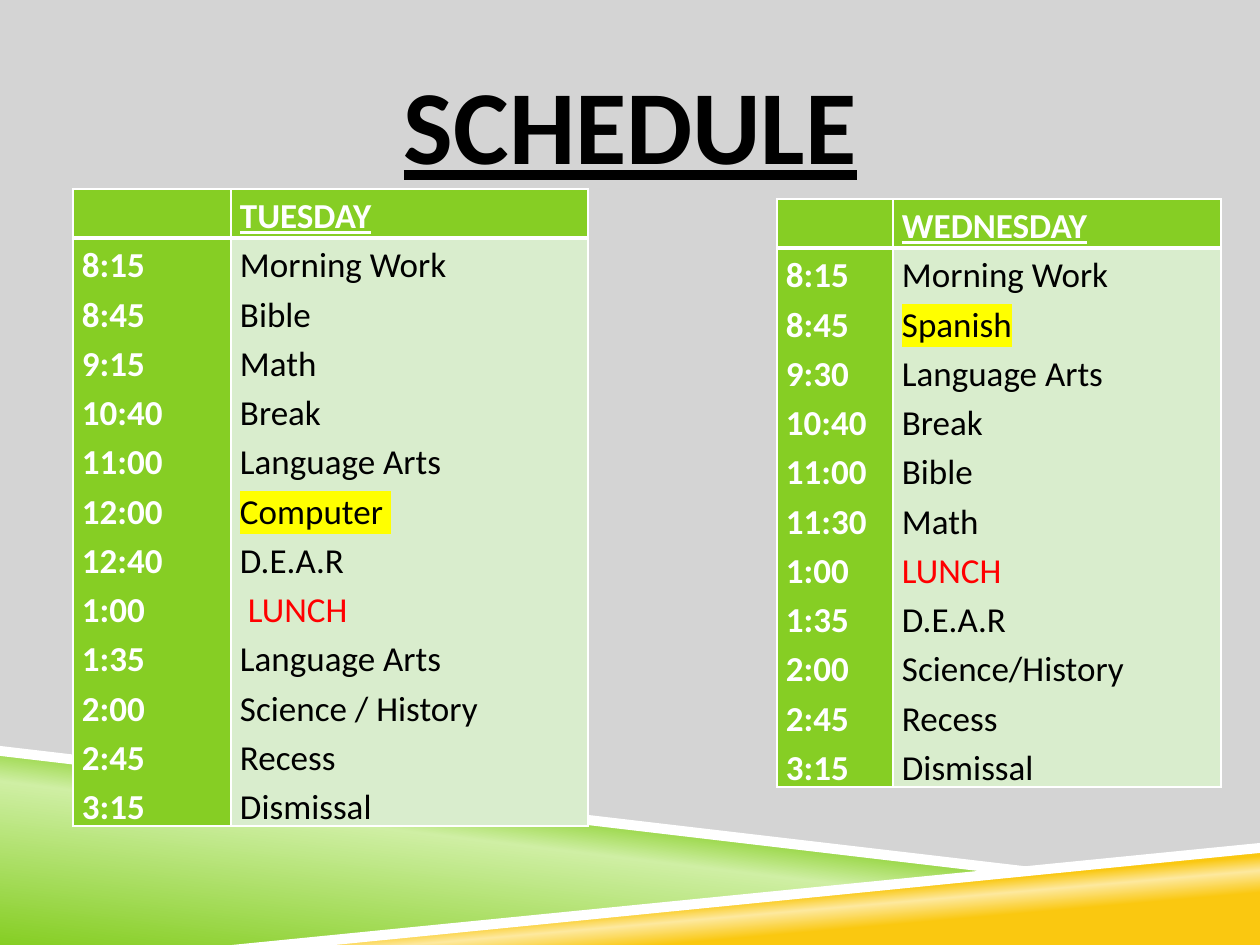
from lxml import etree
from pptx import Presentation
from pptx.dml.color import RGBColor
from pptx.enum.text import MSO_ANCHOR, PP_ALIGN
from pptx.oxml.ns import qn
from pptx.util import Pt

MIDDLE = MSO_ANCHOR.MIDDLE
CENTER = PP_ALIGN.CENTER
EMU_PER_PX = 914400 / 126
FONT = "Calibri"
LINE_HEIGHT = 49

COLORS = {
    "background": "D4D4D4", "green": "86CE24", "light green": "CFEFA4",
    "gold": "FAC810", "light gold": "FDE99F", "pale": "D9EDCD",
    "white": "FFFFFF", "black": "000000", "red": "FF0000", "yellow": "FFFF00",
}

TITLE = "SCHEDULE"
HIGHLIGHTED = ("Computer ", "Spanish")
SCHEDULES = [
    {"day": "TUESDAY", "left": 73, "top": 189, "columns": (158, 357), "lessons": [
        ("8:15", "Morning Work"), ("8:45", "Bible"), ("9:15", "Math"),
        ("10:40", "Break"), ("11:00", "Language Arts"), ("12:00", "Computer "),
        ("12:40", "D.E.A.R"), ("1:00", " LUNCH"), ("1:35", "Language Arts"),
        ("2:00", "Science / History"), ("2:45", "Recess"), ("3:15", "Dismissal")]},
    {"day": "WEDNESDAY", "left": 777, "top": 199, "columns": (116, 328), "lessons": [
        ("8:15", "Morning Work"), ("8:45", "Spanish"), ("9:30", "Language Arts"),
        ("10:40", "Break"), ("11:00", "Bible"), ("11:30", "Math"),
        ("1:00", "LUNCH"), ("1:35", "D.E.A.R"), ("2:00", "Science/History"),
        ("2:45", "Recess"), ("3:15", "Dismissal")]},
]

# Outline points, then a plain colour or (gradient stops, angle).
BANDS = [
    ([(0, 752), (998, 872), (252, 945), (0, 945)],
     ([(0, "green"), (52, "light green"), (66, "green")], 277)),
    ([(249, 945), (1260, 847), (1260, 945)],
     ([(28, "gold"), (40, "light gold"), (48, "gold")], 265)),
    ([(0, 746), (0, 756), (995, 873), (1048, 869)], "white"),
    ([(1260, 843), (232, 945), (335, 945), (1260, 853)], "white"),
]


def px(length):
    return round(length * EMU_PER_PX)


def rgb(name):
    return RGBColor.from_string(COLORS[name])


def add_color(parent, name):
    etree.SubElement(parent, qn("a:srgbClr"), val=COLORS[name])


def fill_gradient(shape, stops, angle):
    """Fill with any number of stops; the angle runs clockwise."""
    shape.fill.gradient()
    gradient = shape._element.spPr.find(qn("a:gradFill"))
    for child in list(gradient):
        gradient.remove(child)
    stop_list = etree.SubElement(gradient, qn("a:gsLst"))
    for position, color in stops:
        add_color(etree.SubElement(stop_list, qn("a:gs"), pos=str(position * 1000)), color)
    etree.SubElement(gradient, qn("a:lin"), ang=str(angle * 60000), scaled="0")


def add_band(slide, points, fill):
    builder = slide.shapes.build_freeform(*points[0], scale=EMU_PER_PX)
    builder.add_line_segments(points[1:], close=True)
    shape = builder.convert_to_shape()
    shape.shadow.inherit = False
    shape.line.fill.background()
    if isinstance(fill, str):
        shape.fill.solid()
        shape.fill.fore_color.rgb = rgb(fill)
    else:
        fill_gradient(shape, *fill)


def style_font(font, size, color, bold, underline=False):
    font.name = FONT
    font.size = Pt(size)
    font.bold = bold
    font.underline = underline
    font.color.rgb = rgb(color)


def add_title(slide):
    box = slide.shapes.add_textbox(px(95), px(38), px(1071), px(157))
    frame = box.text_frame
    frame.word_wrap = True
    frame.vertical_anchor = MIDDLE
    frame.margin_left = frame.margin_right = 0
    frame.margin_top, frame.margin_bottom = px(18), px(6)
    paragraph = frame.paragraphs[0]
    paragraph.text = TITLE
    paragraph.alignment = CENTER
    style_font(paragraph.font, 60, "black", True, True)


def set_borders(cell, bottom_width):
    properties = cell._tc.get_or_add_tcPr()
    sides = [("a:lnL", 1), ("a:lnR", 1), ("a:lnT", 1), ("a:lnB", bottom_width)]
    for index, (side, width) in enumerate(sides):
        line = etree.Element(qn(side), w=str(Pt(width)))
        add_color(etree.SubElement(line, qn("a:solidFill")), "white")
        properties.insert(index, line)


def fill_cell(cell, lines, fill, color, bold, underline=False, bottom_width=1):
    cell.fill.solid()
    cell.fill.fore_color.rgb = rgb(fill)
    set_borders(cell, bottom_width)
    cell.margin_left = cell.margin_right = px(9)
    cell.margin_top = cell.margin_bottom = 0
    frame = cell.text_frame
    for index, text in enumerate(lines):
        paragraph = frame.add_paragraph() if index else frame.paragraphs[0]
        paragraph.line_spacing = 1.15
        if text:
            run = paragraph.add_run()
            run.text = text
            if text in HIGHLIGHTED:
                highlight = etree.SubElement(run._r.get_or_add_rPr(), qn("a:highlight"))
                add_color(highlight, "yellow")
        text_color = "red" if text.strip() == "LUNCH" else color
        style_font(paragraph.font, 20, text_color, bold, underline)


def add_schedule(slide, day, left, top, columns, lessons):
    heights = (LINE_HEIGHT, LINE_HEIGHT * len(lessons))
    table = slide.shapes.add_table(2, 2, px(left), px(top),
                                   px(sum(columns)), px(sum(heights))).table
    for column, width in zip(table.columns, columns):
        column.width = px(width)
    for row, height in zip(table.rows, heights):
        row.height = px(height)
    times, subjects = zip(*lessons)
    for index, heading in enumerate(("", day)):
        fill_cell(table.cell(0, index), [heading], "green", "white", True, True, 3)
    fill_cell(table.cell(1, 0), times, "green", "white", True)
    fill_cell(table.cell(1, 1), subjects, "pale", "black", False)


def main():
    presentation = Presentation()
    presentation.slide_width, presentation.slide_height = px(1260), px(945)
    slide = presentation.slides.add_slide(presentation.slide_layouts[6])
    slide.background.fill.solid()
    slide.background.fill.fore_color.rgb = rgb("background")
    for points, fill in BANDS:
        add_band(slide, points, fill)
    add_title(slide)
    for schedule in SCHEDULES:
        add_schedule(slide, **schedule)
    presentation.save("out.pptx")


if __name__ == "__main__":
    main()
